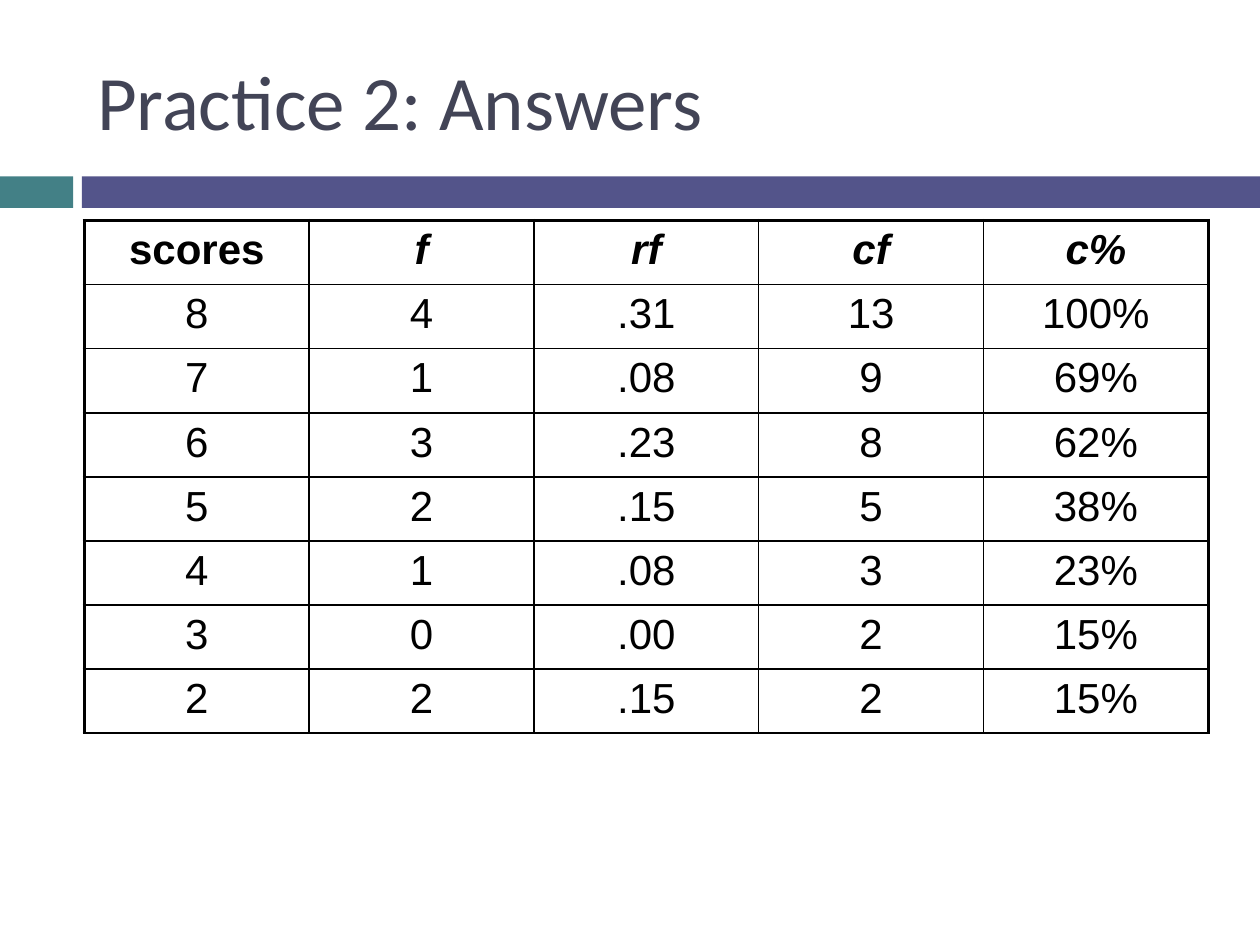
"""Build the frequency table answer slide."""
from dataclasses import dataclass
from typing import Any

from lxml import etree
from pptx import Presentation
from pptx.dml.color import RGBColor
from pptx.enum.shapes import MSO_SHAPE
from pptx.enum.text import MSO_ANCHOR, PP_ALIGN
from pptx.oxml.ns import qn
from pptx.util import Inches, Pt

RECTANGLE = MSO_SHAPE.RECTANGLE
MIDDLE = MSO_ANCHOR.MIDDLE
LEFT, CENTER = PP_ALIGN.LEFT, PP_ALIGN.CENTER


@dataclass(frozen=True)
class Theme:
    """Colours, fonts, type sizes and line widths."""
    teal: str = "438086"
    indigo: str = "53548A"
    heading: str = "424456"
    ink: str = "000000"
    heading_font: str = "Calibri"
    table_font: str = "Arial"
    heading_size: float = 44
    table_size: float = 24
    thin: float = 1
    thick: float = 2.25


@dataclass(frozen=True)
class Band:
    """A coloured piece of the stripe under the title."""
    left: float
    width: float
    color: str


THEME = Theme()
BANDS = (Band(0, 0.58, THEME.teal), Band(0.65, 9.35, THEME.indigo))
BAND_TOP, BAND_HEIGHT = 1.4, 0.25
CONTENT_LEFT, CONTENT_WIDTH = 0.67, 8.92
TITLE_TOP, TITLE_HEIGHT = 0.25, 1.08
TABLE_TOP, TABLE_HEIGHT = 1.75, 4.07
HEADINGS = ("scores", "f", "rf", "cf", "c%")
SCORES = (
    ("8", "4", ".31", "13", "100%"),
    ("7", "1", ".08", "9", "69%"),
    ("6", "3", ".23", "8", "62%"),
    ("5", "2", ".15", "5", "38%"),
    ("4", "1", ".08", "3", "23%"),
    ("3", "0", ".00", "2", "15%"),
    ("2", "2", ".15", "2", "15%"),
)


def write(frame: Any, text: str, color: str, align: Any, **formats: Any) -> None:
    """Write one formatted paragraph into a text frame."""
    paragraph = frame.paragraphs[0]
    paragraph.alignment = align
    run = paragraph.add_run()
    run.text = text
    run.font.color.rgb = RGBColor.from_string(color)
    for attribute, value in formats.items():
        setattr(run.font, attribute, value)


def draw_band(slide: Any, band: Band) -> None:
    """Draw one piece of the stripe."""
    stripe = slide.shapes.add_shape(
        RECTANGLE, Inches(band.left), Inches(BAND_TOP),
        Inches(band.width), Inches(BAND_HEIGHT))
    stripe.shadow.inherit = False
    stripe.fill.solid()
    stripe.fill.fore_color.rgb = RGBColor.from_string(band.color)
    stripe.line.fill.background()


def draw_title(slide: Any, text: str) -> None:
    """Place and format the title."""
    title = slide.shapes.title
    places = {"left": CONTENT_LEFT, "top": TITLE_TOP,
              "width": CONTENT_WIDTH, "height": TITLE_HEIGHT}
    for attribute, length in places.items():
        setattr(title, attribute, Inches(length))
    title.text_frame.vertical_anchor = MIDDLE
    write(title.text_frame, text, THEME.heading, LEFT,
          name=THEME.heading_font, size=Pt(THEME.heading_size))


def set_borders(cell: Any, widths: dict[str, float]) -> None:
    """Give each side of a cell a solid line."""
    properties = cell._tc.get_or_add_tcPr()
    for position, (side, width) in enumerate(widths.items()):
        line = etree.Element(qn(f"a:ln{side}"), w=str(Pt(width)))
        fill = etree.SubElement(line, qn("a:solidFill"))
        etree.SubElement(fill, qn("a:srgbClr"), val=THEME.ink)
        properties.insert(position, line)


def draw_table(slide: Any, rows: tuple[tuple[str, ...], ...]) -> None:
    """Draw the frequency table with a heavier frame on three sides."""
    last = len(rows[0]) - 1
    table = slide.shapes.add_table(
        len(rows), len(rows[0]), Inches(CONTENT_LEFT), Inches(TABLE_TOP),
        Inches(CONTENT_WIDTH), Inches(TABLE_HEIGHT)).table
    table.first_row = table.horz_banding = False
    for row, values in enumerate(rows):
        for column, value in enumerate(values):
            cell = table.cell(row, column)
            cell.fill.background()
            write(cell.text_frame, value, THEME.ink, CENTER,
                  name=THEME.table_font, size=Pt(THEME.table_size),
                  bold=row == 0, italic=row == 0 and column > 0)
            heavy = {"L": column == 0, "R": column == last,
                     "T": row == 0, "B": False}
            set_borders(cell, {side: THEME.thick if outer else THEME.thin
                               for side, outer in heavy.items()})


def main() -> None:
    """Build and save the slide."""
    deck = Presentation()
    deck.slide_width, deck.slide_height = Inches(10), Inches(7.5)
    slide = deck.slides.add_slide(deck.slide_layouts[5])
    for band in BANDS:
        draw_band(slide, band)
    draw_title(slide, "Practice 2: Answers")
    draw_table(slide, (HEADINGS, *SCORES))
    deck.save("out.pptx")


if __name__ == "__main__":
    main()
